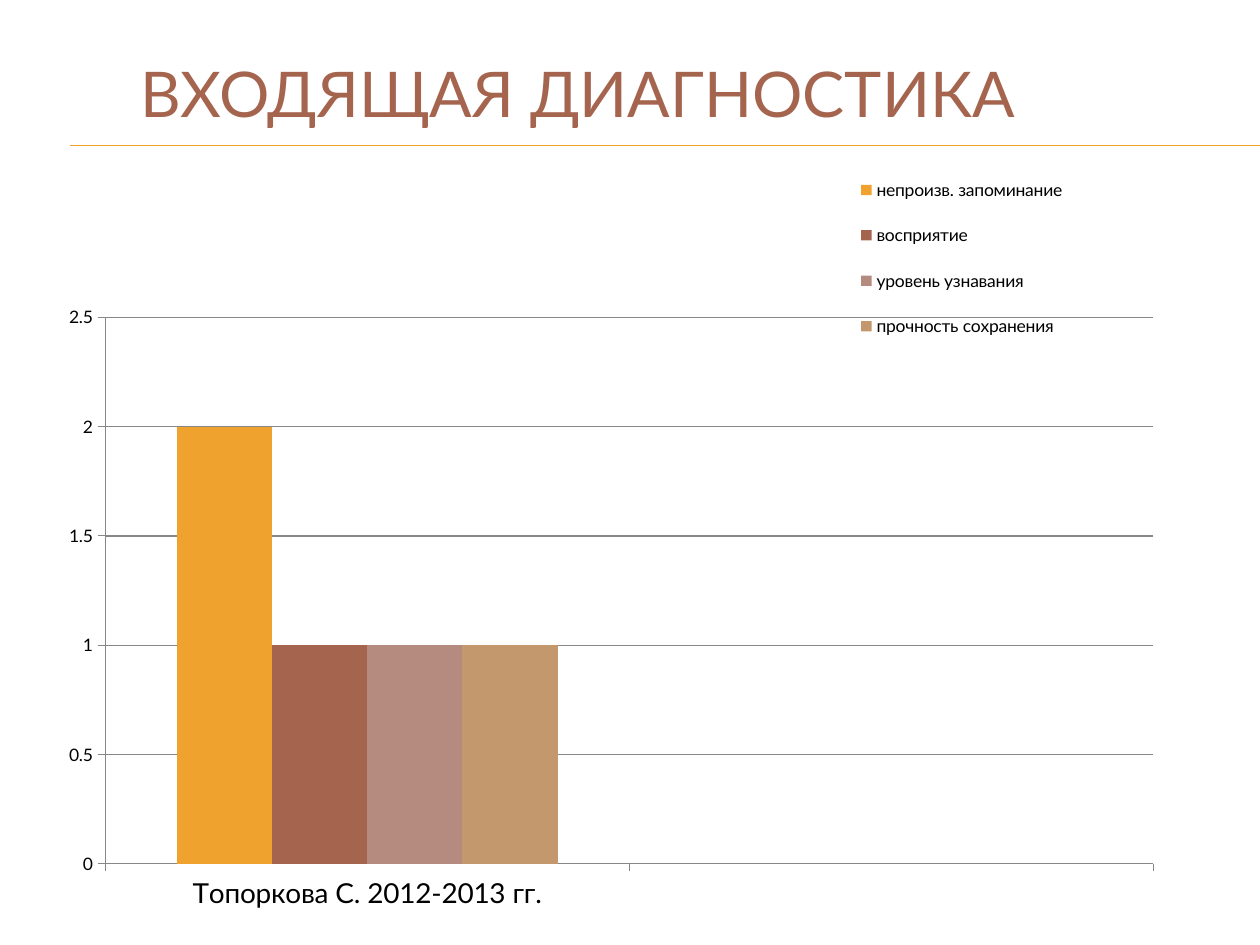
"""Build the diagnostics slide with its clustered column chart."""
from lxml import etree
from pptx import Presentation
from pptx import util as u
from pptx.chart import data as chart_data
from pptx.dml.color import RGBColor
from pptx.enum import chart as charts, shapes, text
from pptx.oxml import ns

GOLD = RGBColor(0xF0, 0xA2, 0x2E)
BROWN = RGBColor(0xA5, 0x64, 0x4E)
ROSE = RGBColor(0xB5, 0x8B, 0x80)
SAND = RGBColor(0xC3, 0x98, 0x6D)
GRAY = RGBColor(0x87, 0x87, 0x87)
BLACK = RGBColor(0, 0, 0)
FONT = "Lato"
SERIES = [
    ("непроизв. запоминание", 2, GOLD),
    ("восприятие", 1, BROWN),
    ("уровень узнавания", 1, ROSE),
    ("прочность сохранения", 1, SAND),
]


def place(parent, index, target, bounds):
    for old in parent.findall(ns.qn("c:layout")):
        parent.remove(old)
    layout = etree.Element(ns.qn("c:layout"))
    manual = etree.SubElement(layout, ns.qn("c:manualLayout"))
    settings = [("layoutTarget", target)] if target else []
    settings += [("xMode", "edge"), ("yMode", "edge")]
    settings += zip("xywh", bounds)
    for name, value in settings:
        etree.SubElement(manual, ns.qn(f"c:{name}")).set("val", str(value))
    parent.insert(index, layout)


deck = Presentation()
deck.slide_width, deck.slide_height = u.Cm(25.4), u.Cm(19.05)
page = deck.slides.add_slide(deck.slide_layouts[6])

for height in (2.93, 2.94):
    rule = page.shapes.add_connector(
        shapes.MSO_CONNECTOR.STRAIGHT, u.Cm(1.42), u.Cm(height), u.Cm(25.4), u.Cm(height))
    rule.line.color.rgb = GOLD
    rule.line.width = u.Pt(0.75)
    etree.SubElement(rule._element.spPr, ns.qn("a:effectLst"))

box = page.shapes.add_textbox(u.Cm(1.27), u.Cm(0.76), u.Cm(20.75), u.Cm(2.21))
box.text_frame.word_wrap = True
box.text_frame.vertical_anchor = text.MSO_ANCHOR.MIDDLE
para = box.text_frame.paragraphs[0]
para.alignment = text.PP_ALIGN.CENTER
span = para.add_run()
span.text = "ВХОДЯЩАЯ ДИАГНОСТИКА"
span.font.name, span.font.size = FONT, u.Pt(36)
span.font.color.rgb = BROWN

results = chart_data.CategoryChartData()
results.categories = ["Топоркова С. 2012-2013 гг.", ""]
for name, value, color in SERIES:
    results.add_series(name, (value, None))
chart = page.shapes.add_chart(
    charts.XL_CHART_TYPE.COLUMN_CLUSTERED,
    u.Cm(0.53), u.Cm(3.12), u.Cm(22.73), u.Cm(15.19), results).chart
chart.has_title = False
chart.font.name, chart.font.size = FONT, u.Pt(10)
chart.font.color.rgb = BLACK

plot = chart.plots[0]
plot.gap_width, plot.overlap = 150, 0
plot.vary_by_categories = False
for series, (name, value, color) in zip(plot.series, SERIES):
    series.format.fill.solid()
    series.format.fill.fore_color.rgb = color

for axis in (chart.category_axis, chart.value_axis):
    axis.major_tick_mark = charts.XL_TICK_MARK.OUTSIDE
    axis.minor_tick_mark = charts.XL_TICK_MARK.NONE
    axis.format.line.color.rgb = GRAY
label_font = chart.category_axis.tick_labels.font
label_font.name, label_font.size = FONT, u.Pt(16)
label_font.color.rgb = BLACK
scale = chart.value_axis
scale.minimum_scale, scale.maximum_scale, scale.major_unit = 0, 2.5, 0.5
scale.has_major_gridlines = True
scale.major_gridlines.format.line.color.rgb = GRAY
scale.tick_labels.number_format = "General"
scale.tick_labels.number_format_is_linked = False

chart.has_legend = True
chart.legend.position = charts.XL_LEGEND_POSITION.RIGHT
chart.legend.include_in_layout = True
place(chart.element.find(".//" + ns.qn("c:plotArea")), 0, "inner", (0.07, 0.22, 0.93, 0.74))
place(chart.element.find(".//" + ns.qn("c:legend")), 1, None, (0.71, 0, 0.24, 0.28))

deck.save("out.pptx")
